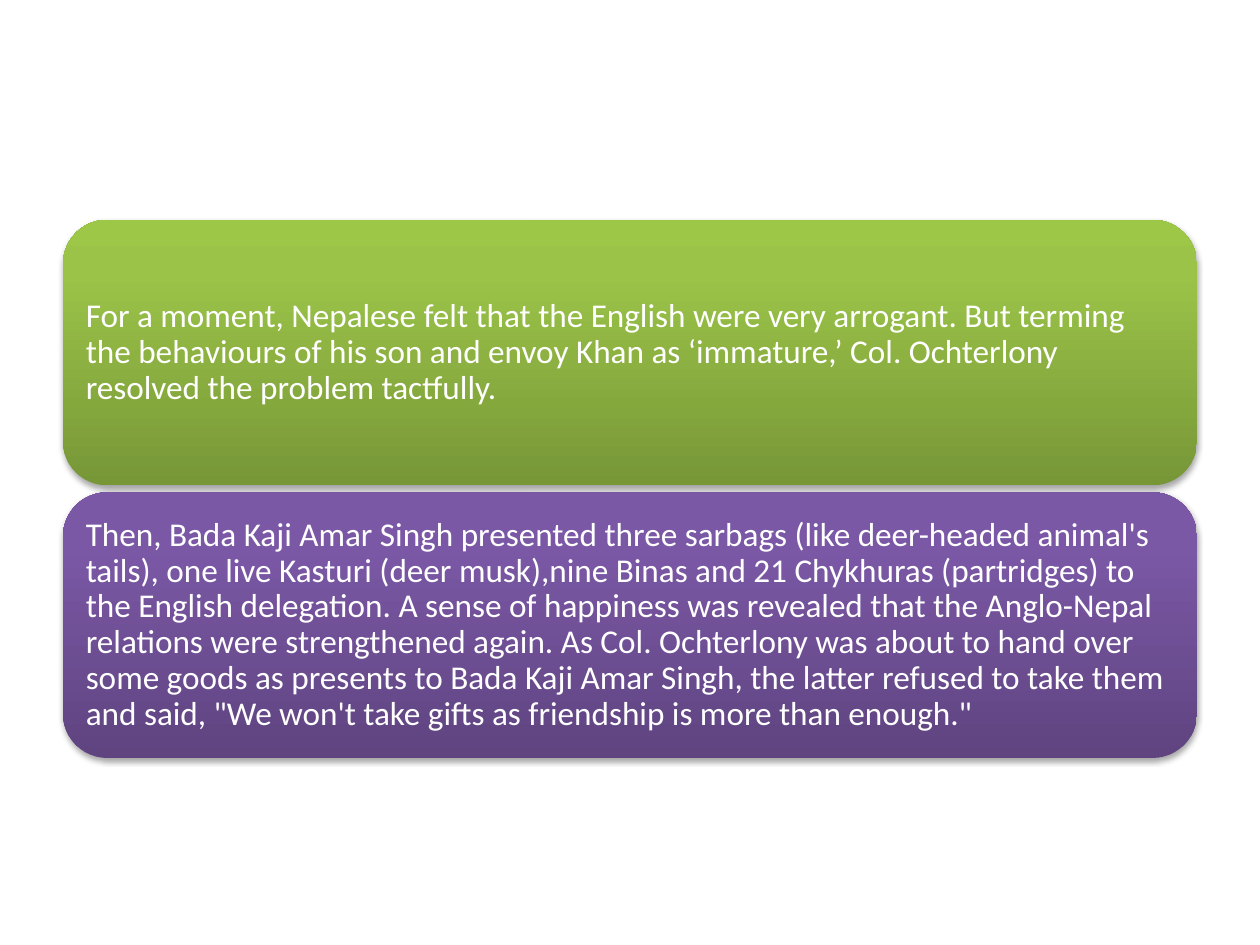
from copy import deepcopy

from lxml.etree import SubElement
from pptx import Presentation
from pptx.dml.color import RGBColor
from pptx.enum.shapes import MSO_SHAPE
from pptx.enum.text import MSO_ANCHOR, PP_ALIGN
from pptx.oxml.ns import qn
from pptx.util import Cm, Pt

# Gradients run from the bottom of a card to its top
COLORS = {
    "text": "FFFFFF",
    "shadow": "000000",
    "green": ["779737", "9BC348", "9DC746"],
    "purple": ["5F4480", "7B58A6", "7C57A8"],
}
STOP_POSITIONS = [0, 0.8, 1]

CARDS = [
    ("green",
     "For a moment, Nepalese felt that the English were very arrogant. But terming "
     "the behaviours of his son and envoy Khan as ‘immature,’ Col. Ochterlony "
     "resolved the problem tactfully."),
    ("purple",
     "Then, Bada Kaji Amar Singh presented three sarbags (like deer-headed animal's "
     "tails), one live Kasturi (deer musk),nine Binas and 21 Chykhuras (partridges) to "
     "the English delegation. A sense of happiness was revealed that the Anglo-Nepal "
     "relations were strengthened again. As Col. Ochterlony was about to hand over "
     "some goods as presents to Bada Kaji Amar Singh, the latter refused to take them "
     "and said, \"We won't take gifts as friendship is more than enough.\""),
]


def fill_gradient(card, shades):
    card.fill.gradient()
    card.fill.gradient_angle = 90
    first_stop = card.fill._fill._gradFill.gsLst[0]
    first_stop.addnext(deepcopy(first_stop))
    for stop, position, shade in zip(card.fill.gradient_stops, STOP_POSITIONS, shades):
        stop.position = position
        stop.color.rgb = RGBColor.from_string(shade)


def add_soft_shadow(card):
    card.shadow.inherit = False
    effects = card._element.spPr.find(qn("a:effectLst"))
    shadow = SubElement(effects, qn("a:outerShdw"), blurRad="40000", dist="23000",
                        dir="5400000", rotWithShape="0")
    color = SubElement(shadow, qn("a:srgbClr"), val=COLORS["shadow"])
    SubElement(color, qn("a:alpha"), val="35000")


def add_card(slide, left, top, width, height, shades, wording):
    card = slide.shapes.add_shape(MSO_SHAPE.ROUNDED_RECTANGLE, left, top, width, height)
    fill_gradient(card, shades)
    card.line.fill.background()
    add_soft_shadow(card)

    # Text inside the card
    frame = card.text_frame
    frame.text = wording
    frame.word_wrap = True
    frame.vertical_anchor = MSO_ANCHOR.MIDDLE
    frame.margin_left = frame.margin_right = Cm(0.2)
    frame.margin_top = frame.margin_bottom = Cm(0.2)
    paragraph = frame.paragraphs[0]
    paragraph.alignment = PP_ALIGN.LEFT
    paragraph.line_spacing = 0.9
    for run in paragraph.runs:
        run.font.name = "Calibri"
        run.font.size = Pt(19)
        run.font.color.rgb = RGBColor.from_string(COLORS["text"])


def add_card_stack(slide, left, top, width, height, gap):
    card_height = (height - gap * (len(CARDS) - 1)) // len(CARDS)
    for index, (shade_name, wording) in enumerate(CARDS):
        card_top = top + index * (card_height + gap)
        add_card(slide, left, card_top, width, card_height, COLORS[shade_name], wording)


def main():
    deck = Presentation()
    deck.slide_width, deck.slide_height = Cm(25.4), Cm(19.05)
    slide = deck.slides.add_slide(deck.slide_layouts[6])
    add_card_stack(slide, Cm(1.27), Cm(4.43), Cm(22.86), Cm(10.85), Cm(0.14))
    deck.save("out.pptx")


if __name__ == "__main__":
    main()
